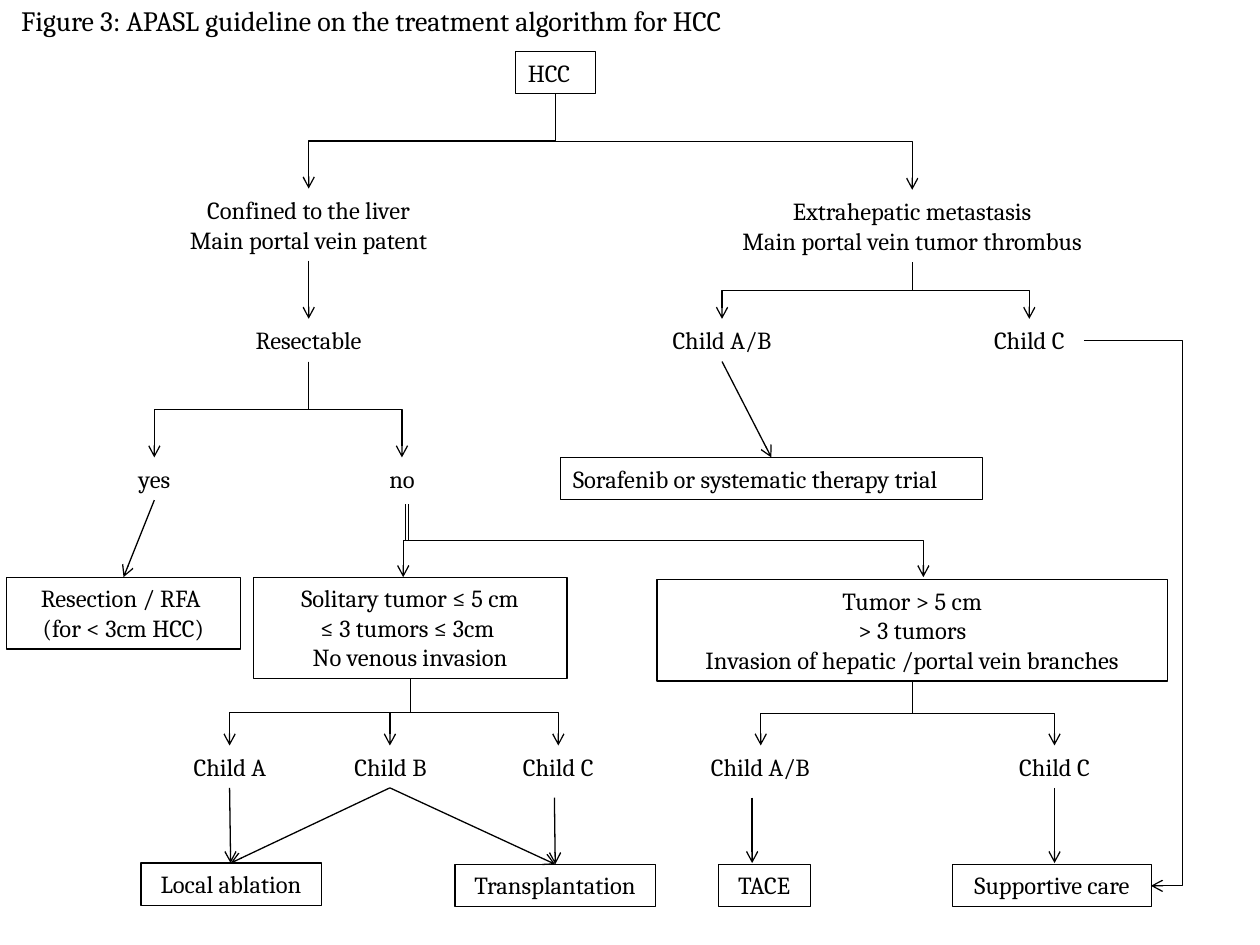
from lxml import etree
from pptx import Presentation
from pptx import util as u
from pptx.dml.color import RGBColor
from pptx.enum import shapes, text
from pptx.oxml.ns import qn

BLACK = RGBColor(0, 0, 0)
FONT = "Cambria"
LEFT, CENTER = text.PP_ALIGN.LEFT, text.PP_ALIGN.CENTER
ELBOW, STRAIGHT = shapes.MSO_CONNECTOR.ELBOW, shapes.MSO_CONNECTOR.STRAIGHT

prs = Presentation()
prs.slide_width, prs.slide_height = u.Pt(720), u.Pt(540)
s = prs.slides.add_slide(prs.slide_layouts[6])


def add_node(lines, cx, top, width, boxed=False, align=CENTER, wrap=False, size=14):
    """Add a text node centred on cx, as tall as its lines need."""
    height = 7.2 + 1.21 * size * len(lines)
    frame = [u.Pt(v) for v in (cx - width / 2, top, width, height)]
    if boxed:
        sp = s.shapes.add_shape(shapes.MSO_SHAPE.RECTANGLE, *frame)
        sp.shadow.inherit = False
        sp.fill.background()
        sp.line.color.rgb = BLACK
        sp.line.width = u.Pt(0.75)
    else:
        sp = s.shapes.add_textbox(*frame)
    tf = sp.text_frame
    tf.word_wrap = wrap
    tf.auto_size = text.MSO_AUTO_SIZE.SHAPE_TO_FIT_TEXT
    tf.vertical_anchor = text.MSO_ANCHOR.TOP
    for i, line in enumerate(lines):
        p = tf.add_paragraph() if i else tf.paragraphs[0]
        p.alignment = align
        r = p.add_run()
        r.text = line
        r.font.name, r.font.size, r.font.color.rgb = FONT, u.Pt(size), BLACK


def add_arrow(x1, y1, x2, y2, kind=STRAIGHT, bend=None):
    """Add an arrow; an elbow runs down first unless a sideways bend is given."""
    down = kind == ELBOW and bend is None
    if down:
        # A quarter-turned frame has its length and breadth swapped.
        cx, cy = (x1 + x2) / 2, (y1 + y2) / 2
        half_w, half_h = (y2 - y1) / 2, abs(x2 - x1) / 2
        ends = (cx - half_w, cy - half_h, cx + half_w, cy + half_h)
    else:
        ends = (x1, y1, x2, y2)
    c = s.shapes.add_connector(kind, *[u.Pt(v) for v in ends])
    c.line.color.rgb = BLACK
    c.line.width = u.Pt(0.75)
    sp_pr = c._element.spPr
    if down:
        xfrm = sp_pr.find(qn("a:xfrm"))
        xfrm.set("rot", "5400000" if x2 < x1 else "16200000")
        if x2 >= x1:
            xfrm.set("flipH", "1")
    if bend is not None:
        guides = sp_pr.find(qn("a:prstGeom")).find(qn("a:avLst"))
        etree.SubElement(guides, qn("a:gd"), name="adj1", fmla=f"val {round(bend * 100000)}")
    etree.SubElement(sp_pr.find(qn("a:ln")), qn("a:tailEnd"), type="arrow")
    etree.SubElement(sp_pr, qn("a:effectLst"))


add_node(["Figure 3: APASL guideline on the treatment algorithm for HCC"],
         352, -1.4, 694, align=LEFT, wrap=True, size=16)

# Column centres and row tops shared by several nodes
CONFINED_X, SPREAD_X, ROOT_X = 176.4, 521.3, 317.5
CHILD_ROW, ANSWER_ROW, LOWER_ROW, THERAPY_ROW = 182.2, 261.4, 426.2, 493.9

plain_nodes = [
    (["Confined to the liver", "Main portal vein patent"], CONFINED_X, 108, 162.7),
    (["Extrahepatic metastasis", "Main portal vein tumor thrombus"], SPREAD_X, 108.7, 226),
    (["Resectable"], CONFINED_X, CHILD_ROW, 80.6),
    (["Child A/B"], 412.6, CHILD_ROW, 81.4),
    (["Child C"], 588.2, CHILD_ROW, 63.4),
    (["yes"], 88.2, ANSWER_ROW, 35.3),
    (["no"], 229.7, ANSWER_ROW, 30.2),
    (["Child A"], 131.4, LOWER_ROW, 64.1),
    (["Child B"], 223.2, LOWER_ROW, 61.9),
    (["Child C"], 319, LOWER_ROW, 63.4),
    (["Child A/B"], 434.5, LOWER_ROW, 81.4),
    (["Child C"], 602.6, LOWER_ROW, 63.4),
]
for node in plain_nodes:
    add_node(*node)

boxed_nodes = [
    (["HCC"], ROOT_X, 29.5, 46, LEFT, False),
    (["Sorafenib or systematic therapy trial"], 441, ANSWER_ROW, 241.2, LEFT, False),
    (["Resection / RFA ", "(for < 3cm HCC)"], 70.6, 329.8, 133.9, CENTER, True),
    (["Solitary tumor ≤ 5 cm", "≤ 3 tumors ≤ 3cm ", "No venous invasion"],
     234.4, 329.8, 179.3, CENTER, True),
    (["Tumor > 5 cm", "> 3 tumors", "Invasion of hepatic /portal vein branches"],
     SPREAD_X, 331.2, 291.6, CENTER, True),
    (["Local ablation"], 132.1, 493.2, 103, CENTER, False),
    (["Transplantation"], 317.2, THERAPY_ROW, 114.5, CENTER, False),
    (["TACE"], 436.7, THERAPY_ROW, 52.6, CENTER, False),
    (["Supportive care"], 601.2, THERAPY_ROW, 113.8, CENTER, False),
]
for lines, cx, top, width, align, wrap in boxed_nodes:
    add_node(lines, cx, top, width, True, align, wrap)

# Forks: start point, then every end point
forks = [
    (ROOT_X, 53.5, [(CONFINED_X, 107.8), (SPREAD_X, 108.5)]),
    (SPREAD_X, 149.8, [(412.6, 182.2), (588.2, 182.2)]),
    (CONFINED_X, 206.6, [(88.2, 261.4), (229.7, 261.4)]),
    (233.3, 288, [(230.4, 329.8)]),
    (231.8, 288, [(527.6, 329.8)]),
    (234.4, 388, [(131.2, 426), (222.8, 426), (319, 426)]),
    (SPREAD_X, 389.5, [(434.7, 426), (602.6, 426)]),
]
for x, y, targets in forks:
    for target in targets:
        add_arrow(x, y, *target, ELBOW)

straight_arrows = [
    (CONFINED_X, 149, CONFINED_X, 182.2),
    (412.6, 206.6, 440.8, 261.4),
    (88.2, 285.8, 70.6, 329.8),
    (131.2, 450.2, 131.8, 493.2),
    (222.8, 450.2, 131.8, 493.2),
    (222.8, 450.2, 317.3, 493.9),
    (316.8, 455.8, 317.3, 493.9),
    (429.8, 455.8, 429.8, 493.2),
    (602.6, 450.2, 602.6, 493.2),
]
for arrow in straight_arrows:
    add_arrow(*arrow)

add_arrow(619.4, 194.4, 657.7, 506.2, ELBOW, bend=1.47)

prs.save("out.pptx")
